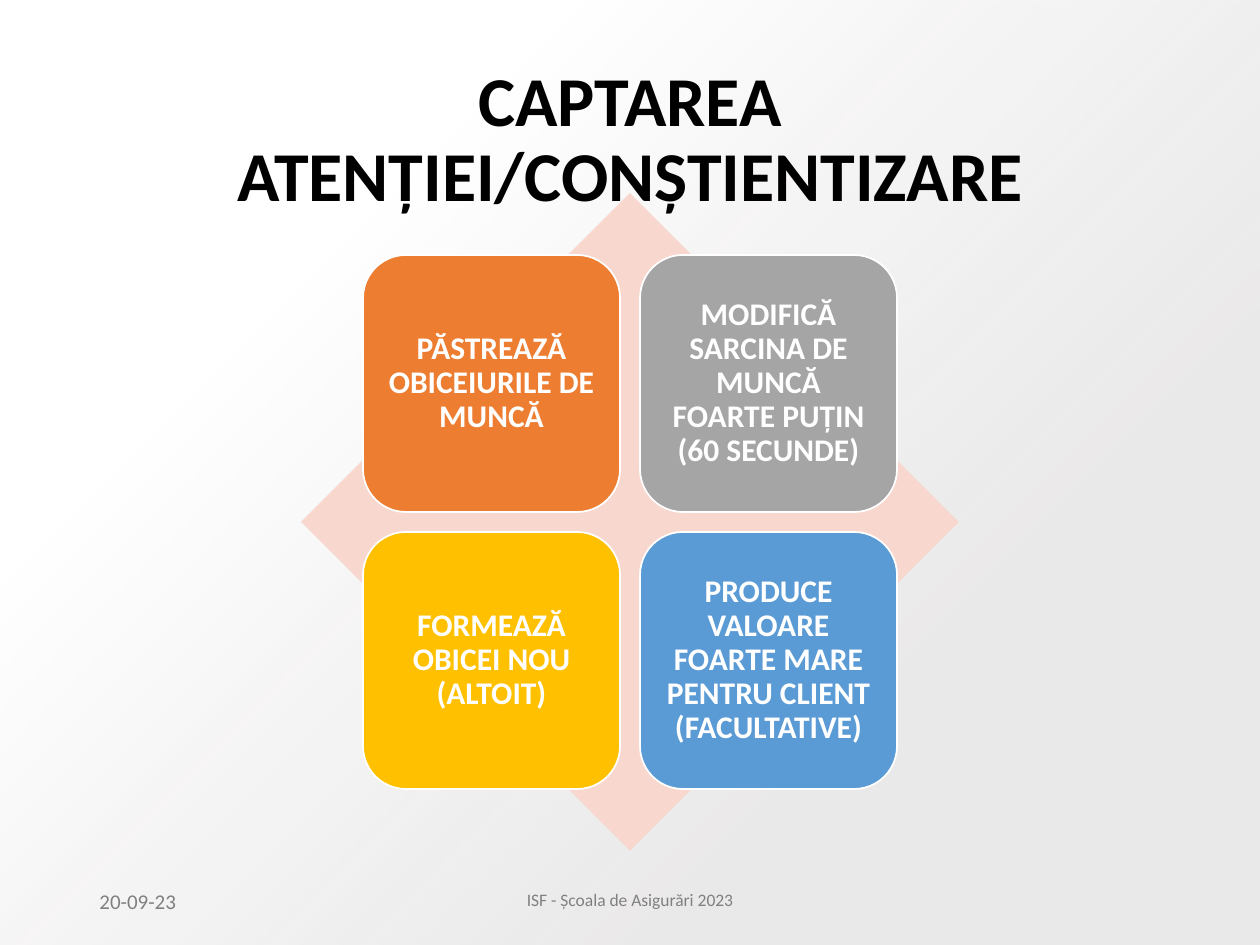
from lxml import etree
from pptx import Presentation
from pptx.dml.color import RGBColor
from pptx.enum.shapes import MSO_SHAPE
from pptx.enum.text import MSO_ANCHOR, MSO_AUTO_SIZE, PP_ALIGN
from pptx.oxml import parse_xml
from pptx.util import Pt

PX = 914400 / 126
FONT = "Calibri"
CENTER, LEFT = PP_ALIGN.CENTER, PP_ALIGN.LEFT
RECT, DIAMOND, ROUNDED = MSO_SHAPE.RECTANGLE, MSO_SHAPE.DIAMOND, MSO_SHAPE.ROUNDED_RECTANGLE
MIDDLE = MSO_ANCHOR.MIDDLE
BLACK = RGBColor(0x00, 0x00, 0x00)
WHITE = RGBColor(0xFF, 0xFF, 0xFF)
GRAY = RGBColor(0x80, 0x80, 0x80)
PINK = RGBColor(0xF8, 0xD7, 0xCE)
ORANGE = RGBColor(0xED, 0x7D, 0x31)
SILVER = RGBColor(0xA5, 0xA5, 0xA5)
GOLD = RGBColor(0xFF, 0xC0, 0x00)
BLUE = RGBColor(0x5B, 0x9B, 0xD5)

GRADIENT = """
<a:gradFill xmlns:a="http://schemas.openxmlformats.org/drawingml/2006/main" rotWithShape="1">
  <a:gsLst>
    <a:gs pos="28000"><a:srgbClr val="E7E6E6"><a:alpha val="84000"/></a:srgbClr></a:gs>
    <a:gs pos="74000"><a:srgbClr val="FFFFFF"/></a:gs>
  </a:gsLst>
  <a:path path="circle"><a:fillToRect l="100000" t="100000"/></a:path>
</a:gradFill>"""


def emu(*lengths):
    return [round(n * PX) for n in lengths]


def write(tf, text, size, color, bold=False, align=CENTER, spacing=0.9):
    tf.word_wrap = True
    tf.auto_size = MSO_AUTO_SIZE.NONE
    tf.vertical_anchor = MIDDLE
    tf.text = text
    p = tf.paragraphs[0]
    p.alignment = align
    p.line_spacing = spacing
    font = p.runs[0].font
    font.name, font.size, font.bold = FONT, Pt(size), bold
    font.color.rgb = color


prs = Presentation()
prs.slide_width, prs.slide_height = emu(1260, 945)
s = prs.slides.add_slide(prs.slide_layouts[5])

# Gradient backdrop, behind the title
backdrop = s.shapes.add_shape(RECT, *emu(0, 0, 1260, 945))
backdrop.shadow.inherit = False
backdrop.line.fill.background()
backdrop.fill.gradient()
grad = backdrop.fill._xPr.gradFill
grad.getparent().replace(grad, parse_xml(etree.tostring(etree.fromstring(GRADIENT))))
s.shapes._spTree.insert(2, backdrop._element)

title = s.shapes.title
title.left, title.top, title.width, title.height = emu(87, 50, 1086, 183)
write(title.text_frame, "CAPTAREA ATENȚIEI/CONȘTIENTIZARE", 40, BLACK, bold=True)

# Date and footer
for text, left, width, size, align, spacing in [
    ("20-09-23", 87, 284, 12, LEFT, 1.0),
    ("ISF - Școala de Asigurări 2023", 417, 426, 10, CENTER, 0.9),
]:
    box = s.shapes.add_textbox(*emu(left, 876, width, 50))
    write(box.text_frame, text, size, GRAY, align=align, spacing=spacing)
    box.text_frame.paragraphs[0].space_after = Pt(6)

# Diamond matrix
diamond = s.shapes.add_shape(DIAMOND, *emu(301, 193, 658, 658))
diamond.shadow.inherit = False
diamond.fill.solid()
diamond.fill.fore_color.rgb = PINK
diamond.line.fill.background()

TILE, STEP, INSET = 257, 277, 9
tiles = [
    ("PĂSTREAZĂ OBICEIURILE DE MUNCĂ", ORANGE),
    ("MODIFICĂ SARCINA DE MUNCĂ FOARTE PUȚIN (60 SECUNDE)", SILVER),
    ("FORMEAZĂ OBICEI NOU (ALTOIT)", GOLD),
    ("PRODUCE VALOARE FOARTE MARE PENTRU CLIENT (FACULTATIVE)", BLUE),
]
for i, (text, color) in enumerate(tiles):
    row, col = divmod(i, 2)
    tile = s.shapes.add_shape(ROUNDED, *emu(363 + col * STEP, 255 + row * STEP, TILE, TILE))
    tile.shadow.inherit = False
    tile.fill.solid()
    tile.fill.fore_color.rgb = color
    tile.line.color.rgb = WHITE
    tile.line.width = Pt(1)
    tf = tile.text_frame
    tf.margin_left, tf.margin_top, tf.margin_right, tf.margin_bottom = emu(*[INSET] * 4)
    write(tf, text, 18, WHITE, bold=True)

prs.save("out.pptx")
